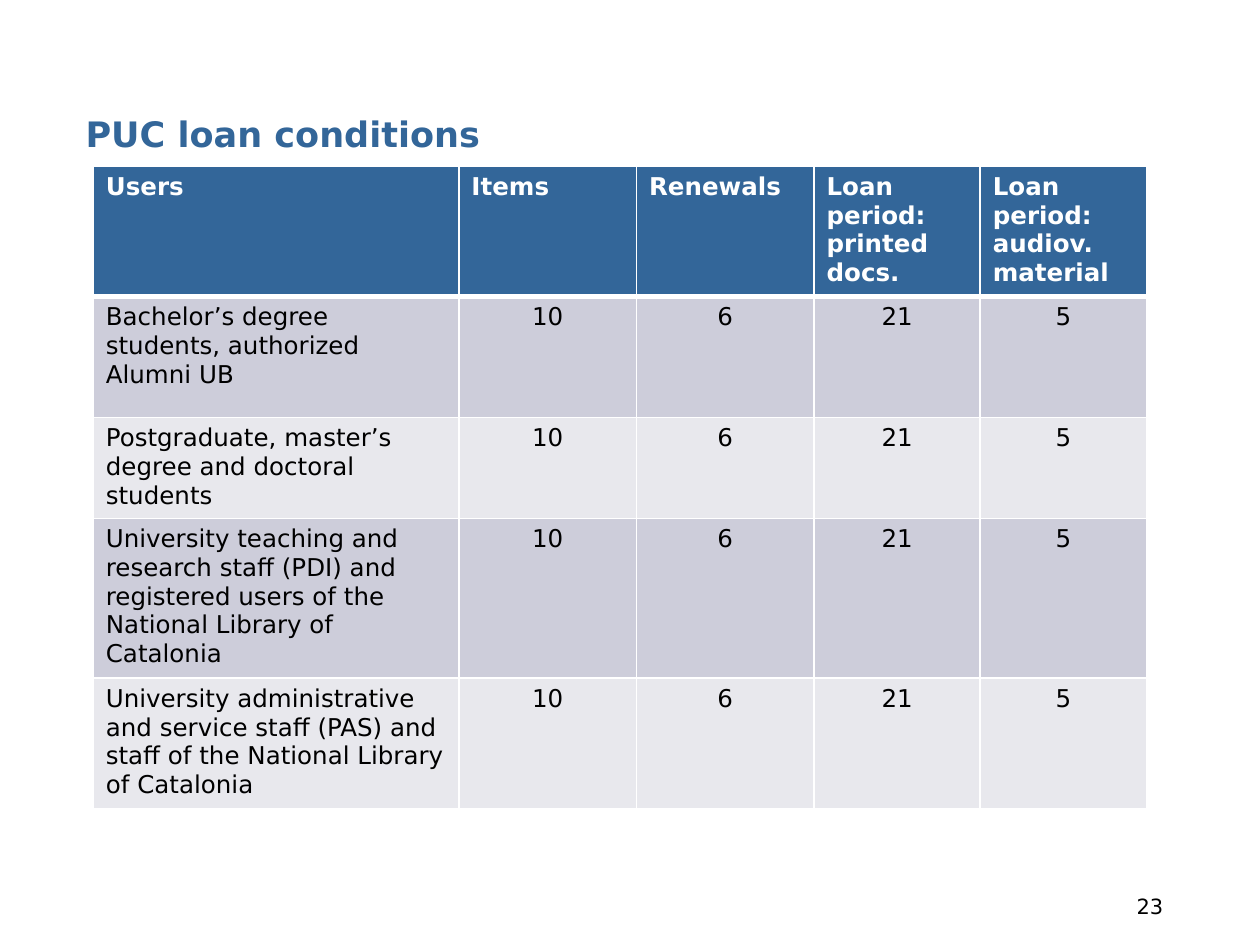
from pptx import Presentation
from pptx.dml.color import RGBColor
from pptx.enum.text import MSO_ANCHOR, MSO_AUTO_SIZE, PP_ALIGN
from pptx.oxml import parse_xml
from pptx.oxml.ns import nsdecls
from pptx.util import Cm, Pt

BLUE, WHITE, BLACK = "336699", "FFFFFF", "000000"
BANDS = ("CDCDDA", "E8E8ED")
COLUMN_WIDTHS = (7.37, 3.58, 3.58, 3.35, 3.35)
ROW_HEIGHTS = (2.44, 2.44, 1.88, 3, 2.44)
HEADINGS = (
    "Users",
    "Items",
    "Renewals",
    "Loan period:\nprinted docs.",
    "Loan period:\naudiov. material",
)
USERS = (
    "Bachelor’s degree students, authorized Alumni UB",
    "Postgraduate, master’s degree and doctoral students",
    "University teaching and research staff (PDI) and registered users "
    "of the National Library of Catalonia",
    "University administrative and service staff (PAS) and staff "
    "of the National Library of Catalonia",
)
CONDITIONS = ("10", "6", "21", "5")


def color(code):
    return RGBColor.from_string(code)


def write(frame, text, font="DejaVu Sans", size=14, ink=BLACK, bold=False,
          align=PP_ALIGN.LEFT, spacing=None):
    frame.word_wrap = True
    frame.text = text
    for paragraph in frame.paragraphs:
        paragraph.alignment = align
        paragraph.line_spacing = spacing
        for run in paragraph.runs:
            run.font.name = font
            run.font.size = Pt(size)
            run.font.bold = bold
            run.font.color.rgb = color(ink)


def set_borders(cell, top, bottom):
    properties = cell._tc.get_or_add_tcPr()
    widths = {"lnL": 1, "lnR": 1, "lnT": top, "lnB": bottom}
    for position, (side, width) in enumerate(widths.items()):
        properties.insert(position, parse_xml(
            f'<a:{side} {nsdecls("a")} w="{Pt(width)}"><a:solidFill>'
            f'<a:srgbClr val="{WHITE}"/></a:solidFill></a:{side}>'))


class LoanSlide:
    """Hold the text style and the current slide."""

    def __init__(self, slide, font="DejaVu Sans"):
        self.slide = slide
        self.font = font

    def title(self, text, left, top, width, height):
        heading = self.slide.shapes.title
        heading.left, heading.top = Cm(left), Cm(top)
        heading.width, heading.height = Cm(width), Cm(height)
        frame = heading.text_frame
        frame.vertical_anchor = MSO_ANCHOR.TOP
        frame.auto_size = MSO_AUTO_SIZE.SHAPE_TO_FIT_TEXT
        write(frame, text, font=self.font, size=20, ink=BLUE, bold=True, spacing=0.9)

    def page_number(self, text, left, top, width, height):
        number = self.slide.shapes.add_textbox(Cm(left), Cm(top), Cm(width), Cm(height))
        number.text_frame.vertical_anchor = MSO_ANCHOR.MIDDLE
        write(number.text_frame, text, font=self.font, size=12, align=PP_ALIGN.RIGHT)

    def table(self, rows, left, top):
        conditions = self.slide.shapes.add_table(
            len(rows), len(rows[0]), Cm(left), Cm(top),
            Cm(sum(COLUMN_WIDTHS)), Cm(sum(ROW_HEIGHTS))).table
        for column, width in zip(conditions.columns, COLUMN_WIDTHS):
            column.width = Cm(width)
        for row_index, (row, height) in enumerate(zip(rows, ROW_HEIGHTS)):
            conditions.rows[row_index].height = Cm(height)
            for column_index, text in enumerate(row):
                self.cell(conditions.cell(row_index, column_index), text,
                          row_index, column_index)

    def cell(self, cell, text, row, column):
        header = row == 0
        cell.fill.solid()
        cell.fill.fore_color.rgb = color(BLUE if header else BANDS[(row - 1) % 2])
        set_borders(cell, top=3 if row == 1 else 1, bottom=3 if header else 1)
        write(cell.text_frame, text, font=self.font, bold=header,
              ink=WHITE if header else BLACK,
              align=PP_ALIGN.LEFT if header or column == 0 else PP_ALIGN.CENTER)


def main():
    presentation = Presentation()
    presentation.slide_width, presentation.slide_height = Cm(25.4), Cm(19.05)
    slide = presentation.slides.add_slide(presentation.slide_layouts[0])
    subtitle = slide.placeholders[1].element
    subtitle.getparent().remove(subtitle)

    loans = LoanSlide(slide)
    loans.title("PUC loan conditions", 1.47, 2.24, 22.6, 1.09)
    loans.page_number("23", 8.41, 17.86, 15.29, 0.81)
    loans.table([HEADINGS] + [(user, *CONDITIONS) for user in USERS], 1.88, 3.35)
    presentation.save("out.pptx")


if __name__ == "__main__":
    main()
